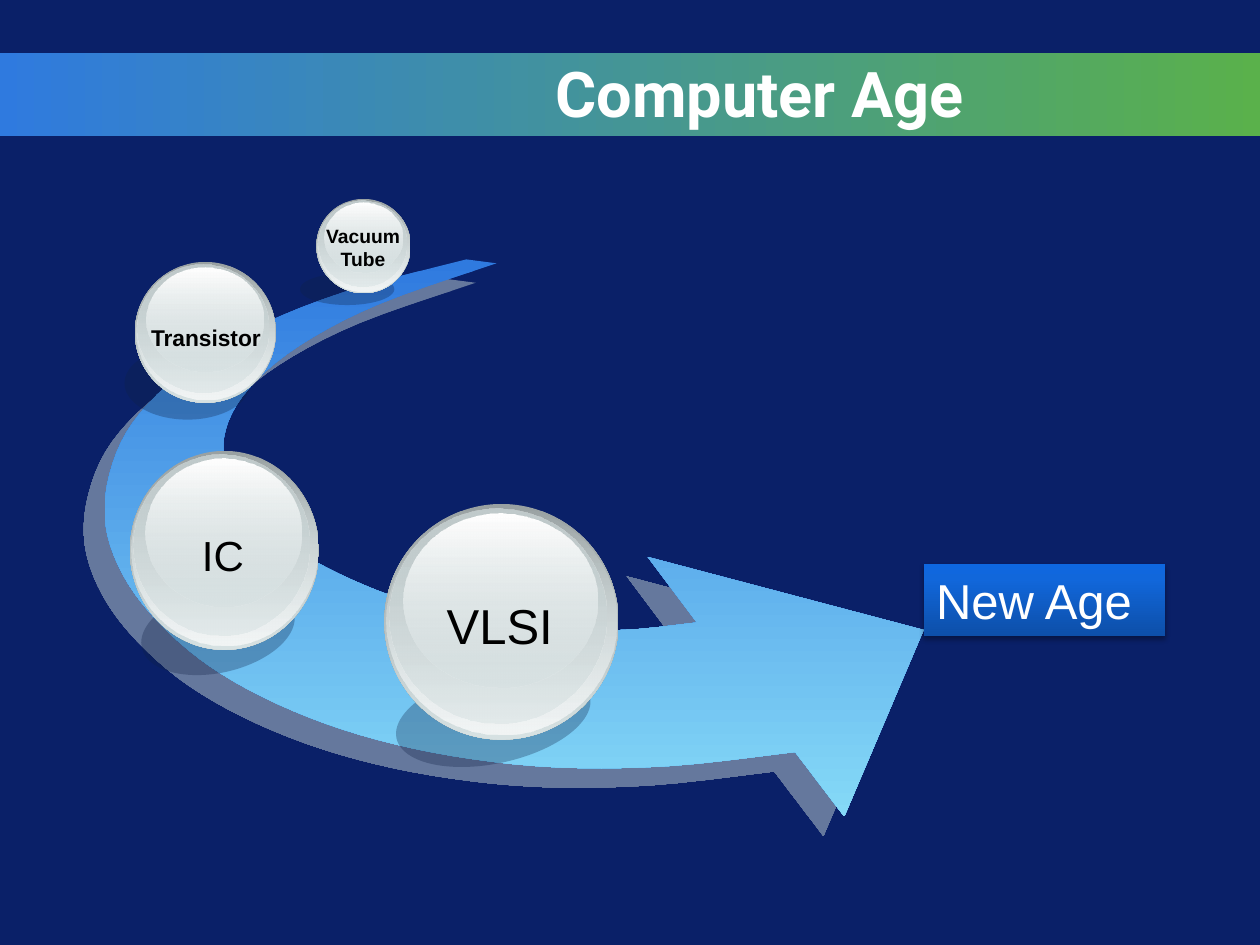
"""Build the Computer Age slide: glossy bubbles along a curved arrow."""
from lxml.etree import SubElement
from pptx import Presentation
from pptx.dml.color import RGBColor
from pptx.enum.shapes import MSO_SHAPE as Preset
from pptx.enum.text import MSO_ANCHOR as Anchor, PP_ALIGN as Align
from pptx.oxml.ns import qn
from pptx.util import Cm, Pt

NAVY = RGBColor(0x0A, 0x20, 0x68)
WHITE = RGBColor(0xFF, 0xFF, 0xFF)
BLACK = RGBColor(0x00, 0x00, 0x00)
BLUE = RGBColor(0x2F, 0x7A, 0xDF)
GREEN = RGBColor(0x5A, 0xB1, 0x4B)
SKY = RGBColor(0x85, 0xD9, 0xF7)
DEEP_BLUE = RGBColor(0x0D, 0x4F, 0xA9)
ROYAL = RGBColor(0x11, 0x67, 0xDB)
BRIGHT_BLUE = RGBColor(0x0E, 0x67, 0xE0)
SHADE = RGBColor(0x0F, 0x21, 0x45)
MIST = RGBColor(0xC1, 0xD1, 0xD3)
STEEL = RGBColor(0x99, 0xA1, 0xA2)
GREY = RGBColor(0xC1, 0xCB, 0xCC)
SILVER = RGBColor(0xD6, 0xE1, 0xE2)
PEARL = RGBColor(0xF2, 0xF5, 0xF5)

BUBBLES = [
    {"text": "VLSI", "size": 28, "bold": False, "wrap": False,
     "ball": (7.75, 10.16, 4.72, 4.75), "label": (8.74, 11.89, 2.67, 1.45),
     "shade": (7.95, 13.54, 3.99, 1.85), "tilt": -12.1},
    {"text": "IC", "size": 24, "bold": False, "wrap": False,
     "ball": (2.62, 9.09, 3.81, 4.01), "label": (3.81, 10.54, 1.37, 1.27),
     "shade": (2.82, 11.86, 3.15, 1.7), "tilt": -12.9},
    {"text": "Transistor", "size": 13, "bold": True, "wrap": True,
     "ball": (2.72, 5.28, 2.84, 2.84), "label": (2.74, 6.4, 2.82, 0.81),
     "shade": (2.51, 6.99, 2.54, 1.47), "tilt": 0},
    {"text": "Vacuum Tube", "size": 11, "bold": True, "wrap": True,
     "ball": (6.38, 4.01, 1.9, 1.9), "label": (6.15, 4.39, 2.34, 1.19),
     "shade": (6.05, 5.51, 1.9, 0.64), "tilt": 0},
]
BALL_LAYERS = [
    ((0, 0, 1, 1), [(0, STEEL, 100), (100, SILVER, 100)]),
    ((0.01, 0.01, 0.98, 0.97), [(0, SILVER, 0), (100, PEARL, 100)]),
    ((0.02, 0.02, 0.93, 0.91), [(0, GREY, 100), (100, SILVER, 48)]),
    ((0.08, 0.04, 0.83, 0.74), [(0, WHITE, 100), (100, SILVER, 38)]),
]
OUTER_CURVE = [
    (9.4, 5.23), (6.93, 5.89), (5, 6.68), (3.61, 7.57), (2.67, 8.53), (2.21, 9.55),
    (2.13, 10.59), (2.49, 11.61), (3.2, 12.55), (4.24, 13.44), (5.61, 14.2),
    (7.24, 14.81), (9.12, 15.24), (11.23, 15.47), (13.54, 15.44), (16.03, 15.16),
]
ARROW_HEAD = [(17.02, 16.46), (18.62, 12.7), (13.06, 11.23)]
INNER_CURVE = [
    (14.05, 12.55), (12.57, 12.7), (11.07, 12.65), (9.58, 12.45), (8.13, 12.09),
    (6.86, 11.58), (5.79, 10.97), (5, 10.26), (4.57, 9.47), (4.55, 8.66),
    (5.03, 7.82), (6.05, 6.96), (7.67, 6.12), (10.01, 5.31),
]
CURVE_STEPS = 5


def add_color(parent, color, alpha):
    element = SubElement(parent, qn("a:srgbClr"), val=str(color))
    if alpha < 100:
        SubElement(element, qn("a:alpha"), val=str(alpha * 1000))


def paint(shape, stops, angle=90):
    shape.shadow.inherit = False
    shape.line.fill.background()
    shape.fill.background()
    properties = shape.element.spPr
    blank = properties.find(qn("a:noFill"))
    if len(stops) == 1:
        fill = SubElement(properties, qn("a:solidFill"))
        add_color(fill, *stops[0][1:])
    else:
        fill = SubElement(properties, qn("a:gradFill"), rotWithShape="1")
        stop_list = SubElement(fill, qn("a:gsLst"))
        for position, color, alpha in stops:
            stop = SubElement(stop_list, qn("a:gs"), pos=str(position * 1000))
            add_color(stop, color, alpha)
        SubElement(fill, qn("a:lin"), ang=str(angle * 60000), scaled="0")
    properties.replace(blank, fill)


def cast_shadow(shape, color, alpha, blur, distance, angle):
    effects = shape.element.spPr.find(qn("a:effectLst"))
    shadow = SubElement(effects, qn("a:outerShdw"), blurRad=str(Pt(blur)),
                        dist=str(Pt(distance)), dir=str(angle * 60000),
                        algn="ctr", rotWithShape="0")
    add_color(shadow, color, alpha)


def add_preset(slide, preset, box, stops, angle=90):
    shape = slide.shapes.add_shape(preset, *map(Cm, box))
    paint(shape, stops, angle)
    return shape


def write(shape, text, size, color, align, font="Arial", bold=False, wrap=True,
          anchor=Anchor.TOP):
    frame = shape.text_frame
    frame.word_wrap = wrap
    frame.vertical_anchor = anchor
    paragraph = frame.paragraphs[0]
    paragraph.alignment = align
    run = paragraph.add_run()
    run.text = text
    run.font.size = Pt(size)
    run.font.name = font
    run.font.bold = bold
    run.font.color.rgb = color


def smooth_curve(points):
    padded = [points[0], *points, points[-1]]
    curve = []
    for a, b, c, d in zip(padded, padded[1:], padded[2:], padded[3:]):
        for step in range(CURVE_STEPS):
            t = step / CURVE_STEPS
            curve.append(tuple(
                q + t / 2 * (r - p + t * (2 * p - 5 * q + 4 * r - s
                                          + t * (3 * q - p - 3 * r + s)))
                for p, q, r, s in zip(a, b, c, d)))
    return curve + [points[-1]]


def add_arrow(slide):
    outline = smooth_curve(OUTER_CURVE) + ARROW_HEAD + smooth_curve(INNER_CURVE)
    first, *rest = [(Cm(x), Cm(y)) for x, y in outline]
    builder = slide.shapes.build_freeform(*first)
    builder.add_line_segments(rest, close=True)
    arrow = builder.convert_to_shape()
    paint(arrow, [(0, BLUE, 100), (100, SKY, 100)])
    cast_shadow(arrow, MIST, 50, 0, 16.3, 137)


def add_bubble(slide, bubble):
    shade = add_preset(slide, Preset.OVAL, bubble["shade"], [(0, SHADE, 30)])
    shade.rotation = bubble["tilt"]
    left, top, width, height = bubble["ball"]
    for (x, y, w, h), stops in BALL_LAYERS:
        box = (left + x * width, top + y * height, w * width, h * height)
        add_preset(slide, Preset.OVAL, box, stops)
    label = slide.shapes.add_textbox(*map(Cm, bubble["label"]))
    write(label, bubble["text"], bubble["size"], BLACK, Align.CENTER,
          bold=bubble["bold"], wrap=bubble["wrap"])


def main():
    presentation = Presentation()
    presentation.slide_width, presentation.slide_height = Cm(25.4), Cm(19.05)
    slide = presentation.slides.add_slide(presentation.slide_layouts[6])
    slide.background.fill.solid()
    slide.background.fill.fore_color.rgb = NAVY

    add_preset(slide, Preset.RECTANGLE, (0, 1.06, 25.4, 1.69),
               [(0, BLUE, 100), (100, GREEN, 100)], 0)
    title = slide.shapes.add_textbox(*map(Cm, (1.27, 1.06, 18.42, 1.59)))
    write(title, "Computer Age", 36, WHITE, Align.RIGHT, "Roboto", True,
          anchor=Anchor.MIDDLE)

    add_arrow(slide)
    goal = add_preset(slide, Preset.RECTANGLE, (18.62, 11.37, 4.87, 1.45),
                      [(0, DEEP_BLUE, 100), (80, ROYAL, 100), (100, BRIGHT_BLUE, 100)], 270)
    cast_shadow(goal, BLACK, 35, 3.1, 1.8, 90)
    write(goal, "New Age", 28, WHITE, Align.LEFT)
    for bubble in BUBBLES:
        add_bubble(slide, bubble)
    presentation.save("out.pptx")


if __name__ == "__main__":
    main()
